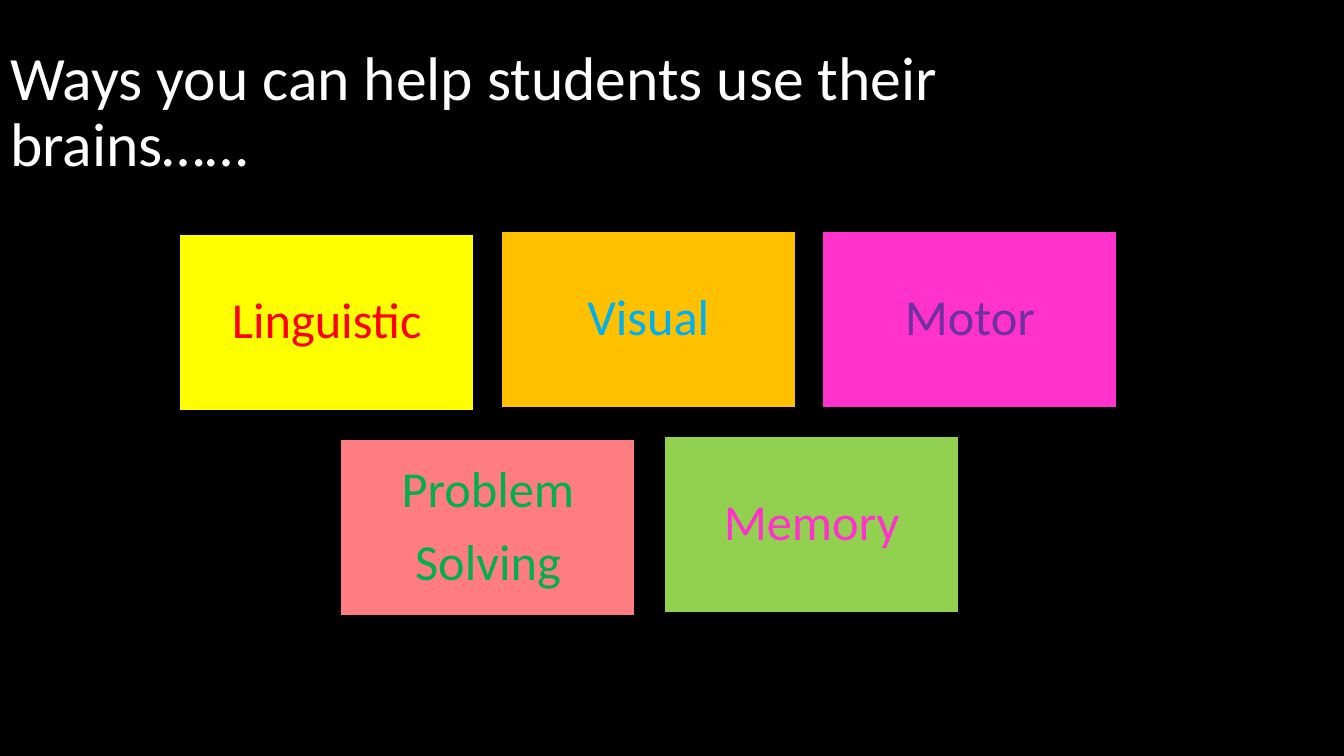
from pptx import Presentation
from pptx.dml.color import RGBColor
from pptx.enum.shapes import MSO_SHAPE
from pptx.enum.text import MSO_ANCHOR, MSO_AUTO_SIZE, PP_ALIGN
from pptx.util import Inches, Pt

RECTANGLE = MSO_SHAPE.RECTANGLE
MIDDLE = MSO_ANCHOR.MIDDLE
LEFT, CENTER = PP_ALIGN.LEFT, PP_ALIGN.CENTER
NO_AUTOFIT = MSO_AUTO_SIZE.NONE

BLACK, WHITE = "000000", "FFFFFF"
CARD_WIDTH, CARD_HEIGHT = 2.92, 1.75

# left, top, fill, text colour, lines
SKILLS = [
    (1.78, 2.32, "FFFF00", "FF0000", ["Linguistic"]),
    (4.97, 2.29, "FFC000", "00B0F0", ["Visual"]),
    (8.16, 2.29, "FF33CC", "7030A0", ["Motor"]),
    (3.38, 4.36, "FF7C80", "00B050", ["Problem", "Solving"]),
    (6.59, 4.33, "92D050", "FF33CC", ["Memory"]),
]


def rgb(color):
    return RGBColor.from_string(color)


class SlideBuilder:
    font = "Calibri"
    line_spacing = 0.9

    def __init__(self, slide):
        self.slide = slide

    def background(self, color):
        fill = self.slide.background.fill
        fill.solid()
        fill.fore_color.rgb = rgb(color)

    def set_lines(self, frame, lines, size, color, align, gap=0):
        """Fill a text frame with one paragraph per line, gap points apart."""
        frame.word_wrap = True
        frame.auto_size = NO_AUTOFIT
        frame.vertical_anchor = MIDDLE
        for index, line in enumerate(lines):
            paragraph = frame.add_paragraph() if index else frame.paragraphs[0]
            paragraph.alignment = align
            paragraph.line_spacing = self.line_spacing
            if index:
                paragraph.space_before = Pt(gap)
            run = paragraph.add_run()
            run.text = line
            run.font.name = self.font
            run.font.size = Pt(size)
            run.font.color.rgb = rgb(color)

    def title(self, text, left, top, width, height):
        heading = self.slide.shapes.title
        heading.left, heading.top = Inches(left), Inches(top)
        heading.width, heading.height = Inches(width), Inches(height)
        self.set_lines(heading.text_frame, [text], 44, WHITE, LEFT)

    def card(self, left, top, fill, color, lines):
        card = self.slide.shapes.add_shape(
            RECTANGLE, Inches(left), Inches(top), Inches(CARD_WIDTH), Inches(CARD_HEIGHT))
        card.shadow.inherit = False
        card.fill.solid()
        card.fill.fore_color.rgb = rgb(fill)
        card.line.color.rgb = rgb(BLACK)
        card.line.width = Pt(1)
        frame = card.text_frame
        frame.margin_left = frame.margin_right = Inches(0.15)
        frame.margin_top = frame.margin_bottom = Inches(0.15)
        self.set_lines(frame, lines, 36, color, CENTER, gap=12.6)


def main():
    deck = Presentation()
    deck.slide_width, deck.slide_height = Inches(13.33), Inches(7.5)
    title_only = deck.slide_layouts[5]
    builder = SlideBuilder(deck.slides.add_slide(title_only))
    builder.background(BLACK)
    builder.title("Ways you can help students use their brains……", 0, 0.4, 11.5, 1.45)
    for skill in SKILLS:
        builder.card(*skill)
    deck.save("out.pptx")


if __name__ == "__main__":
    main()
